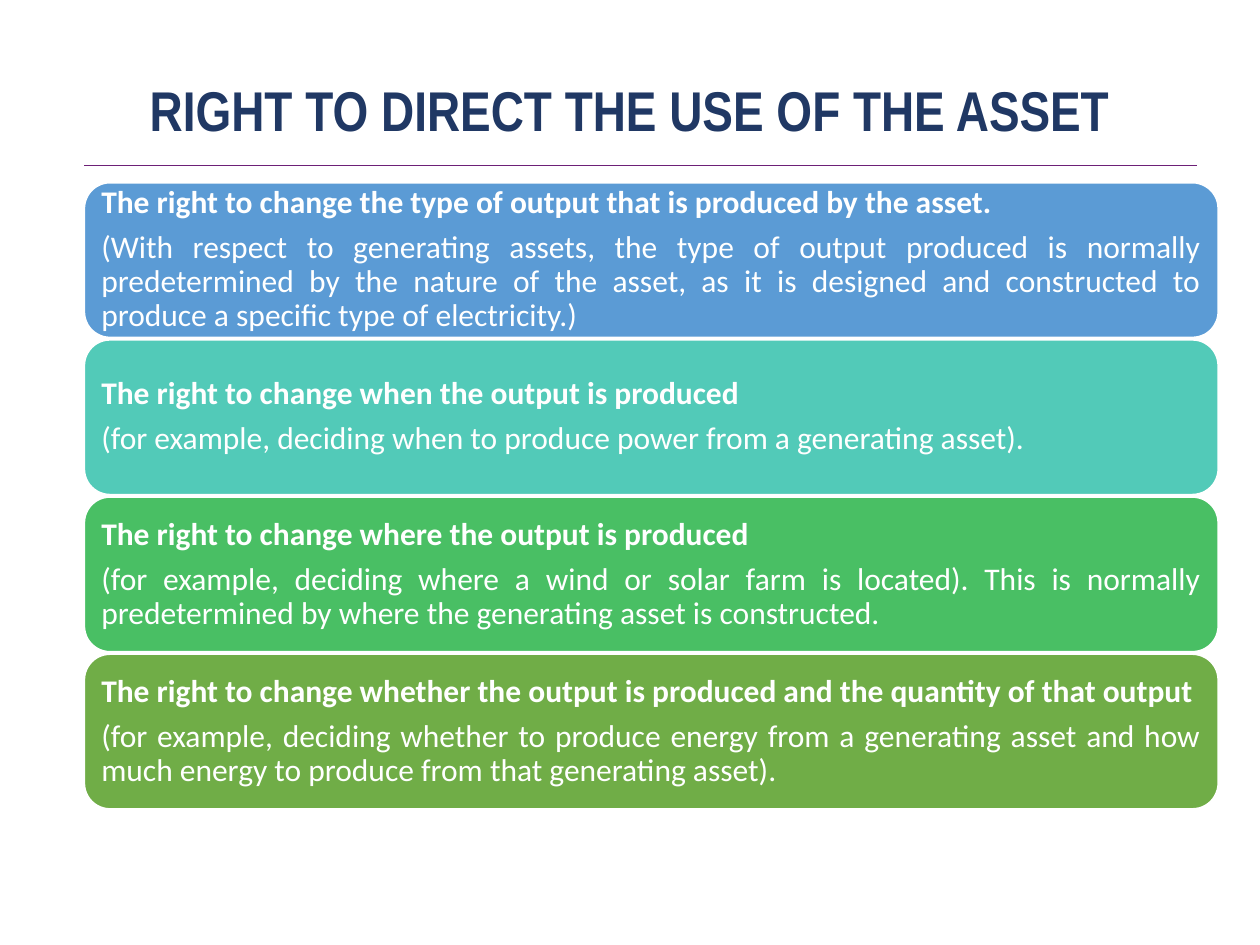
from lxml.etree import SubElement
from pptx import Presentation
from pptx.dml.color import RGBColor
from pptx.enum.shapes import MSO_CONNECTOR, MSO_SHAPE
from pptx.enum.text import MSO_ANCHOR, PP_ALIGN
from pptx.oxml.ns import qn
from pptx.util import Pt

COLORS = {
    "title": "203864",
    "rule": "6D2077",
    "white": "FFFFFF",
    "blue": "5B9BD5",
    "teal": "52CAB8",
    "green": "49BF64",
    "olive": "70AD47",
}

RIGHTS = [
    ("blue", "The right to change the type of output that is produced by the asset.",
     "(With respect to generating assets, the type of output produced is normally "
     "predetermined by the nature of the asset, as it is designed and constructed "
     "to produce a specific type of electricity.)"),
    ("teal", "The right to change when the output is produced",
     "(for example, deciding when to produce power from a generating asset)."),
    ("green", "The right to change where the output is produced",
     "(for example, deciding where a wind or solar farm is located). This is normally "
     "predetermined by where the generating asset is constructed."),
    ("olive", "The right to change whether the output is produced and the quantity of that output",
     "(for example, deciding whether to produce energy from a generating asset and "
     "how much energy to produce from that generating asset)."),
]

LEFT = 48.2
CARD_TOP, CARD_WIDTH, CARD_HEIGHT, CARD_PITCH = 104.4, 648, 88.5, 89.8


def color(name):
    return RGBColor.from_string(COLORS[name])


def write(para, text, align, font_name, size, color_name, bold):
    para.text = text
    para.alignment = align
    para.line_spacing = 0.9
    font = para.font
    font.name, font.size, font.bold = font_name, Pt(size), bold
    font.color.rgb = color(color_name)


def add_title(page, text):
    box = page.shapes.add_textbox(Pt(36), Pt(35.3), Pt(648), Pt(59))
    frame = box.text_frame
    frame.word_wrap = True
    frame.vertical_anchor = MSO_ANCHOR.MIDDLE
    write(frame.paragraphs[0], text, PP_ALIGN.CENTER, "Arial Narrow", 32, "title", True)


def add_rule(page):
    rule = page.shapes.add_connector(
        MSO_CONNECTOR.STRAIGHT, Pt(LEFT), Pt(94.3), Pt(684), Pt(94.3))
    rule.line.color.rgb = color("rule")
    rule.line.width = Pt(0.5)
    SubElement(rule._element.spPr, qn("a:effectLst"))


def add_card(page, top, fill_name, heading, detail):
    card = page.shapes.add_shape(
        MSO_SHAPE.ROUNDED_RECTANGLE, Pt(LEFT), Pt(top), Pt(CARD_WIDTH), Pt(CARD_HEIGHT))
    card.shadow.inherit = False
    card.fill.solid()
    card.fill.fore_color.rgb = color(fill_name)
    card.line.color.rgb = color("white")
    card.line.width = Pt(1)

    frame = card.text_frame
    frame.word_wrap = True
    frame.vertical_anchor = MSO_ANCHOR.MIDDLE
    frame.margin_left = frame.margin_right = Pt(5.4)
    frame.margin_top = frame.margin_bottom = Pt(5.4)
    for para, text, bold in ((frame.paragraphs[0], heading, True),
                             (frame.add_paragraph(), detail, False)):
        write(para, text, PP_ALIGN.JUSTIFY, "Calibri", 18, "white", bold)
        para.space_after = Pt(6.3)


def main():
    deck = Presentation()
    deck.slide_width, deck.slide_height = Pt(720), Pt(540)
    page = deck.slides.add_slide(deck.slide_layouts[6])

    # Heading
    add_rule(page)
    add_title(page, "RIGHT TO DIRECT THE USE OF THE ASSET")

    # Stack of rights
    for row, (fill_name, heading, detail) in enumerate(RIGHTS):
        add_card(page, CARD_TOP + row * CARD_PITCH, fill_name, heading, detail)

    deck.save("out.pptx")


if __name__ == "__main__":
    main()
